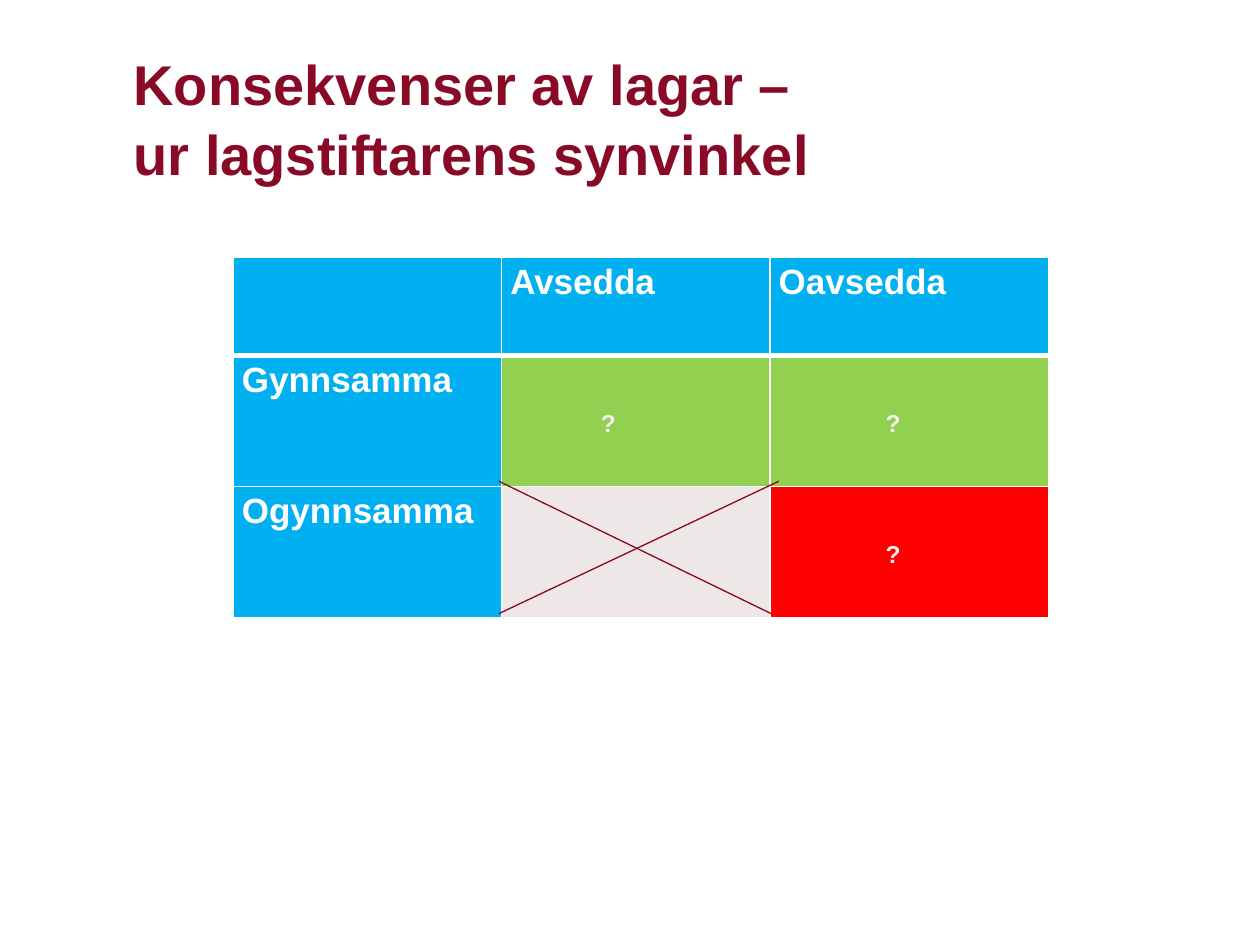
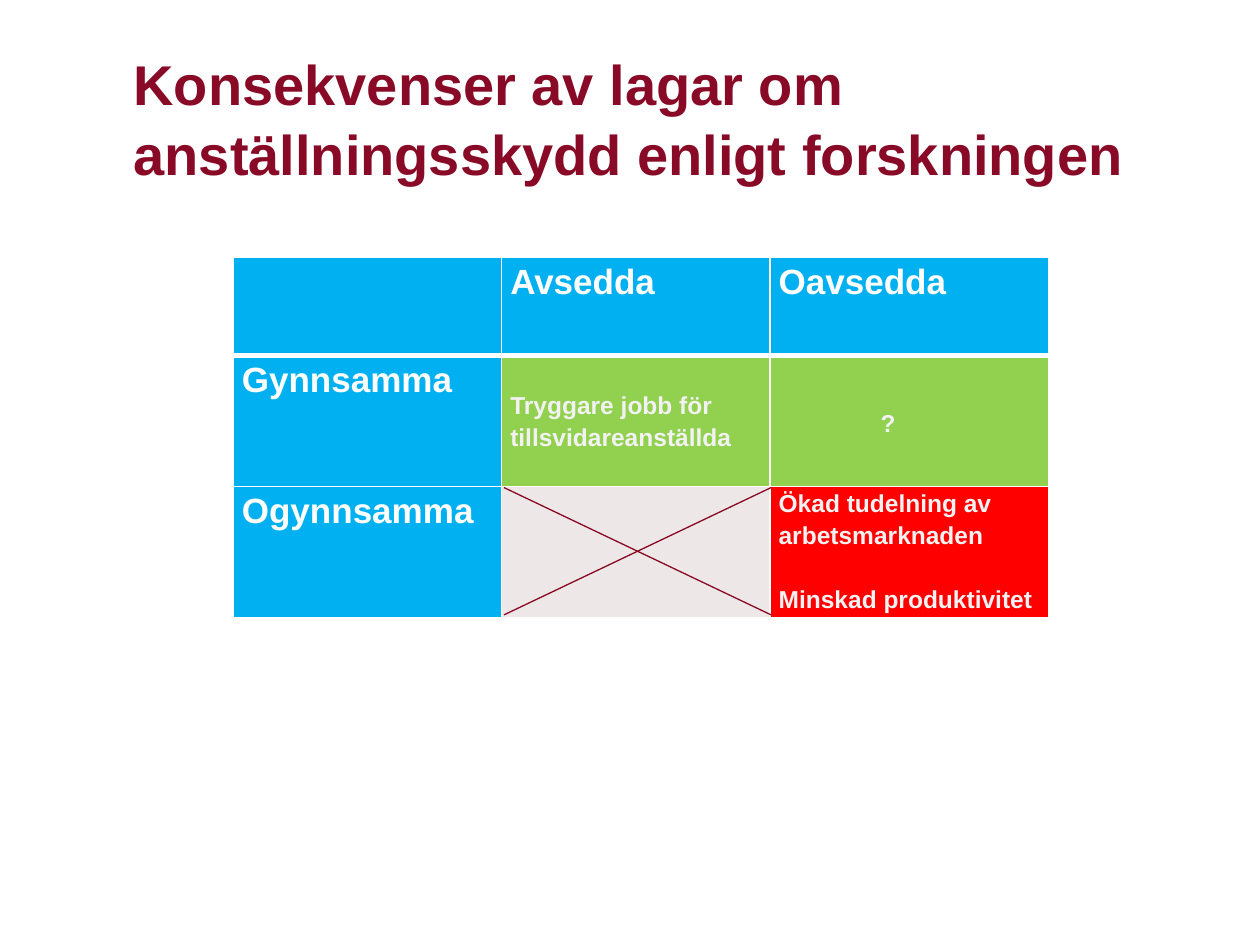
from dataclasses import dataclass

from lxml import etree
from pptx import Presentation
from pptx import util as u
from pptx.dml.color import RGBColor
from pptx.enum import shapes, text
from pptx.oxml import ns

# Shared colours and type
FONT = "Arial"
WINE = RGBColor(0x88, 0x0A, 0x26)
CROSS_WINE = RGBColor(0x88, 0x07, 0x23)
WHITE = RGBColor(0xFF, 0xFF, 0xFF)
PALE = RGBColor(0xF2, 0xF2, 0xF2)
BLUE = RGBColor(0x00, 0xB0, 0xF0)
GREEN = RGBColor(0x92, 0xD0, 0x50)
RED = RGBColor(0xFF, 0x00, 0x00)
GREY = RGBColor(0xED, 0xE7, 0xE8)
HEADING = {"size": u.Pt(20), "color": WHITE}
FINDING = {"size": u.Pt(14), "color": PALE}

# Shared places, in inches: left, top, width, height
TITLE_BOX = (1.06, 0.3, 8.35, 1.25)
MATRIX_BOX = (1.85, 2.04, 6.47, 2.86)
COLUMNS = (2.13, 2.13, 2.21)
ROWS = (0.78, 1.04, 1.04)
SIDE_MARGIN = 0.07
FILLS = ((BLUE, BLUE, BLUE), (BLUE, GREEN, GREEN), (BLUE, GREY, RED))
HEADINGS = {(0, 1): "Avsedda", (0, 2): "Oavsedda",
            (1, 0): "Gynnsamma", (2, 0): "Ogynnsamma"}


@dataclass
class Effect:
    """Paragraphs in one cell, with their distance from its corner."""
    paragraphs: tuple
    left: float = SIDE_MARGIN
    top: float = 0


def format_paragraph(paragraph, size, color, spacing):
    paragraph.line_spacing = spacing
    for name, value in {"name": FONT, "bold": True, "size": size}.items():
        setattr(paragraph.font, name, value)
    paragraph.font.color.rgb = color


def add_title(slide, box, wording):
    title = slide.shapes.title
    for name, value in zip(("left", "top", "width", "height"), box):
        setattr(title, name, u.Inches(value))
    frame = title.text_frame
    frame.text = wording
    settings = {"margin_left": 0, "margin_right": u.Inches(0.1),
                "margin_top": u.Inches(0.05), "margin_bottom": u.Inches(0.05),
                "word_wrap": True, "auto_size": text.MSO_AUTO_SIZE.NONE,
                "vertical_anchor": text.MSO_ANCHOR.MIDDLE}
    for name, value in settings.items():
        setattr(frame, name, value)
    paragraph = frame.paragraphs[0]
    paragraph.alignment = text.PP_ALIGN.LEFT
    format_paragraph(paragraph, u.Pt(32), WINE, 1.04)


def add_borders(cell, row):
    """White rules, with a heavier one under the header row."""
    widths = {"L": 1, "R": 1, "T": 3 if row == 1 else 1, "B": 3 if row == 0 else 1}
    properties = cell._tc.get_or_add_tcPr()
    for side, width in widths.items():
        rule = etree.SubElement(properties, ns.qn(f"a:ln{side}"), w=str(u.Pt(width)))
        fill = etree.SubElement(rule, ns.qn("a:solidFill"))
        etree.SubElement(fill, ns.qn("a:srgbClr"), val=str(WHITE))


def fill_cell(cell, effect, style):
    margins = {"margin_left": effect.left, "margin_right": SIDE_MARGIN,
               "margin_top": effect.top, "margin_bottom": 0}
    for name, value in margins.items():
        setattr(cell, name, u.Inches(value))
    cell.text_frame.text = "\n".join(effect.paragraphs)
    for index, paragraph in enumerate(cell.text_frame.paragraphs):
        format_paragraph(paragraph, **style, spacing=1.15)
        if index:
            paragraph.space_before = u.Pt(18.5)


def add_matrix(slide, box, effects):
    matrix = slide.shapes.add_table(
        len(ROWS), len(COLUMNS), *map(u.Inches, box)).table
    for column, width in zip(matrix.columns, COLUMNS):
        column.width = u.Inches(width)
    for row, height in zip(matrix.rows, ROWS):
        row.height = u.Inches(height)
    for r, fills in enumerate(FILLS):
        for c, color in enumerate(fills):
            cell = matrix.cell(r, c)
            add_borders(cell, r)
            cell.fill.solid()
            cell.fill.fore_color.rgb = color
            if (r, c) in HEADINGS:
                fill_cell(cell, Effect((HEADINGS[r, c],)), HEADING)
            elif (r, c) in effects:
                fill_cell(cell, effects[r, c], FINDING)


def add_cross(slide, box, strokes):
    """Strike out a cell; strokes are measured from the matrix corner."""
    left, top = box[:2]
    for x1, y1, x2, y2 in strokes:
        ends = (left + x1, top + y1, left + x2, top + y2)
        stroke = slide.shapes.add_connector(
            shapes.MSO_CONNECTOR.STRAIGHT, *map(u.Inches, ends))
        stroke.line.color.rgb = CROSS_WINE
        stroke.line.width = u.Pt(0.75)
        etree.SubElement(stroke._element.spPr, ns.qn("a:effectLst"))


def add_consequences_slide(deck, title, effects, strokes):
    slide = deck.slides.add_slide(deck.slide_layouts[5])
    add_title(slide, TITLE_BOX, title)
    add_matrix(slide, MATRIX_BOX, effects)
    add_cross(slide, MATRIX_BOX, strokes)


def main():
    deck = Presentation()
    deck.slide_width, deck.slide_height = u.Inches(10), u.Inches(7.5)

    # The legislator's view
    unknown = Effect(("?",), 0.92, 0.4)
    add_consequences_slide(
        deck, "Konsekvenser av lagar –\vur lagstiftarens synvinkel",
        {(1, 1): Effect(("?",), 0.79, 0.4), (1, 2): unknown, (2, 2): unknown},
        ((2.11, 1.78, 4.27, 2.83), (2.11, 2.83, 4.33, 1.78)))

    # Research on employment protection
    add_consequences_slide(
        deck, "Konsekvenser av lagar om anställningsskydd enligt forskningen",
        {(1, 1): Effect(("Tryggare jobb för tillsvidareanställda",), top=0.26),
         (1, 2): Effect(("?",), 0.88, 0.4),
         (2, 2): Effect(("Ökad tudelning av arbetsmarknaden",
                         "Minskad produktivitet"))},
        ((2.15, 2.84, 4.27, 1.83), (2.15, 1.83, 4.27, 2.84)))

    deck.save("out.pptx")


if __name__ == "__main__":
    main()
